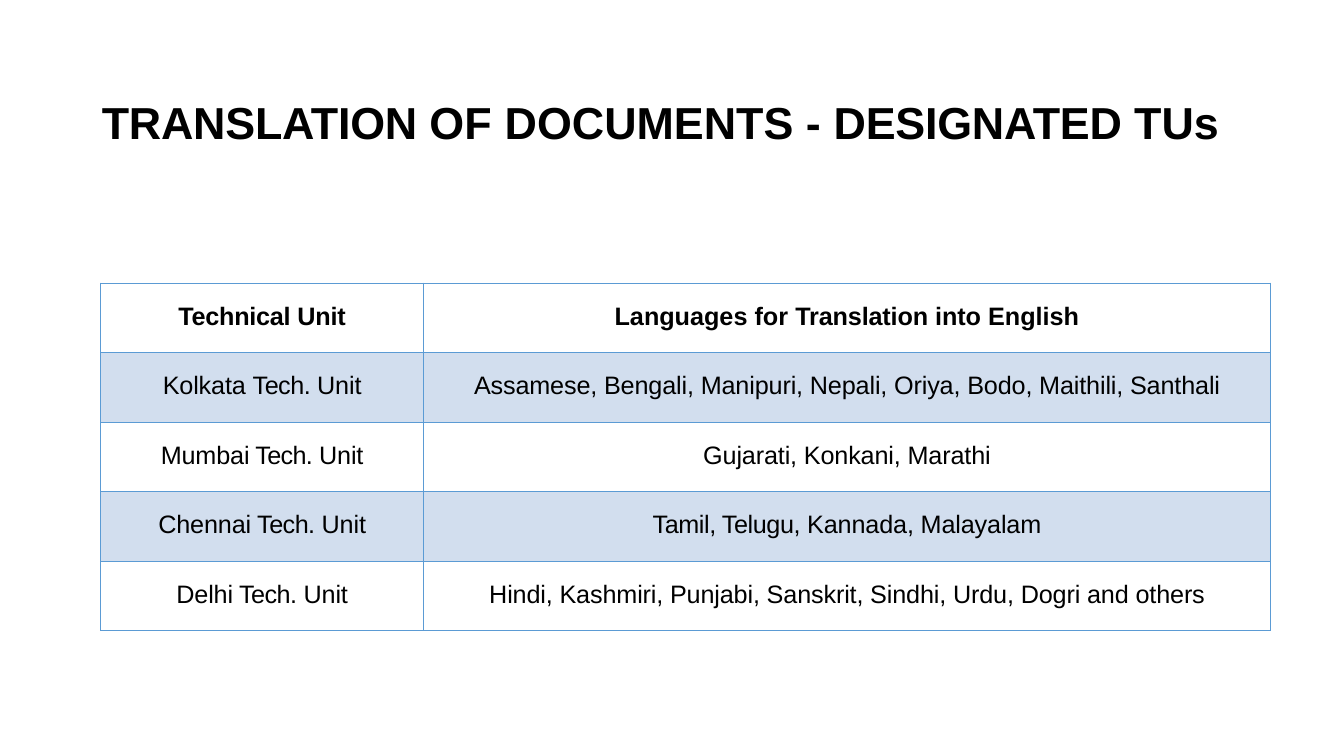
from lxml import etree
from pptx import Presentation
from pptx.dml.color import RGBColor
from pptx.enum.text import MSO_ANCHOR, MSO_AUTO_SIZE, PP_ALIGN
from pptx.oxml.ns import qn
from pptx.util import Inches, Pt

LEFT, CENTER = PP_ALIGN.LEFT, PP_ALIGN.CENTER
TOP, BOTTOM = MSO_ANCHOR.TOP, MSO_ANCHOR.BOTTOM
BLACK = RGBColor(0x00, 0x00, 0x00)
BAND = RGBColor(0xD2, 0xDE, 0xEE)
BORDER = RGBColor(0x5B, 0x9B, 0xD4)

COLS = [3.2, 8.4]
ROW_H = 0.69

# Each cell is a list of (text, letter spacing in points)
ROWS = [
    [[("Technical ", -0.2), ("Unit", -0.1)],
     [("Languages for ", 0), ("Translation ", -0.1), ("into English", 0)]],
    [[("Kolkata ", -0.1), ("Tech. ", -0.4), ("Unit", -0.1)],
     [("Assamese, Bengali, Manipuri, Nepali, Oriya, Bodo, Maithili, Santhali", -0.1)]],
    [[("Mumbai", -0.1), (" Tech. ", -0.5), ("Unit", -0.1)],
     [("Gujarati, Konkani, Marathi", -0.1)]],
    [[("Chennai", -0.1), (" Tech. ", -0.4), ("Unit", -0.1)],
     [("Tamil, Telugu, ", -0.3), ("Kannada, Malayalam", -0.1)]],
    [[("Delhi", -0.1), (" Tech. ", -0.4), ("Unit", -0.1)],
     [("Hindi, Kashmiri, Punjabi, Sanskrit, Sindhi, Urdu, Dogri and others", -0.1)]],
]


def add_runs(p, runs, size, bold, align):
    p.alignment = align
    for text, spacing in runs:
        r = p.add_run()
        r.text = text
        r.font.name = "Arial"
        r.font.size = Pt(size)
        r.font.bold = bold
        r.font.color.rgb = BLACK
        r.font._element.set("spc", str(round(spacing * 100)))


def add_borders(cell):
    tcPr = cell._tc.get_or_add_tcPr()
    for i, side in enumerate(("a:lnL", "a:lnR", "a:lnT", "a:lnB")):
        ln = etree.Element(qn(side), w=str(Pt(1)))
        fill = etree.SubElement(ln, qn("a:solidFill"))
        etree.SubElement(fill, qn("a:srgbClr"), val=str(BORDER))
        tcPr.insert(i, ln)


prs = Presentation()
prs.slide_width, prs.slide_height = Inches(13.33), Inches(7.5)
s = prs.slides.add_slide(prs.slide_layouts[5])

title = s.shapes.title
title.left, title.top = Inches(1), Inches(0.91)
title.width, title.height = Inches(11.15), Inches(0.56)
tf = title.text_frame
tf.auto_size = MSO_AUTO_SIZE.NONE
tf.word_wrap = True
tf.vertical_anchor = BOTTOM
tf.margin_left = Inches(0.01)
tf.margin_right = tf.margin_top = tf.margin_bottom = 0
add_runs(tf.paragraphs[0],
         [("TRANSLATION ", -0.2), ("OF ", 0.1), ("DOCUMENTS - ", 0),
          ("DESIGNATED ", -0.2), ("TUs", 0)], 32, True, LEFT)

table = s.shapes.add_table(len(ROWS), len(COLS), Inches(1), Inches(2.81),
                           Inches(sum(COLS)), Inches(ROW_H * len(ROWS))).table
table.first_row = table.horz_banding = False
for col, width in zip(table.columns, COLS):
    col.width = Inches(width)
for i, row in enumerate(ROWS):
    table.rows[i].height = Inches(ROW_H)
    for j, runs in enumerate(row):
        cell = table.cell(i, j)
        cell.margin_left = cell.margin_right = cell.margin_bottom = 0
        cell.margin_top = Inches(0.19)
        cell.vertical_anchor = TOP
        if i % 2:
            cell.fill.solid()
            cell.fill.fore_color.rgb = BAND
        else:
            cell.fill.background()
        add_borders(cell)
        add_runs(cell.text_frame.paragraphs[0], runs, 18, i == 0, CENTER)

prs.save("out.pptx")
